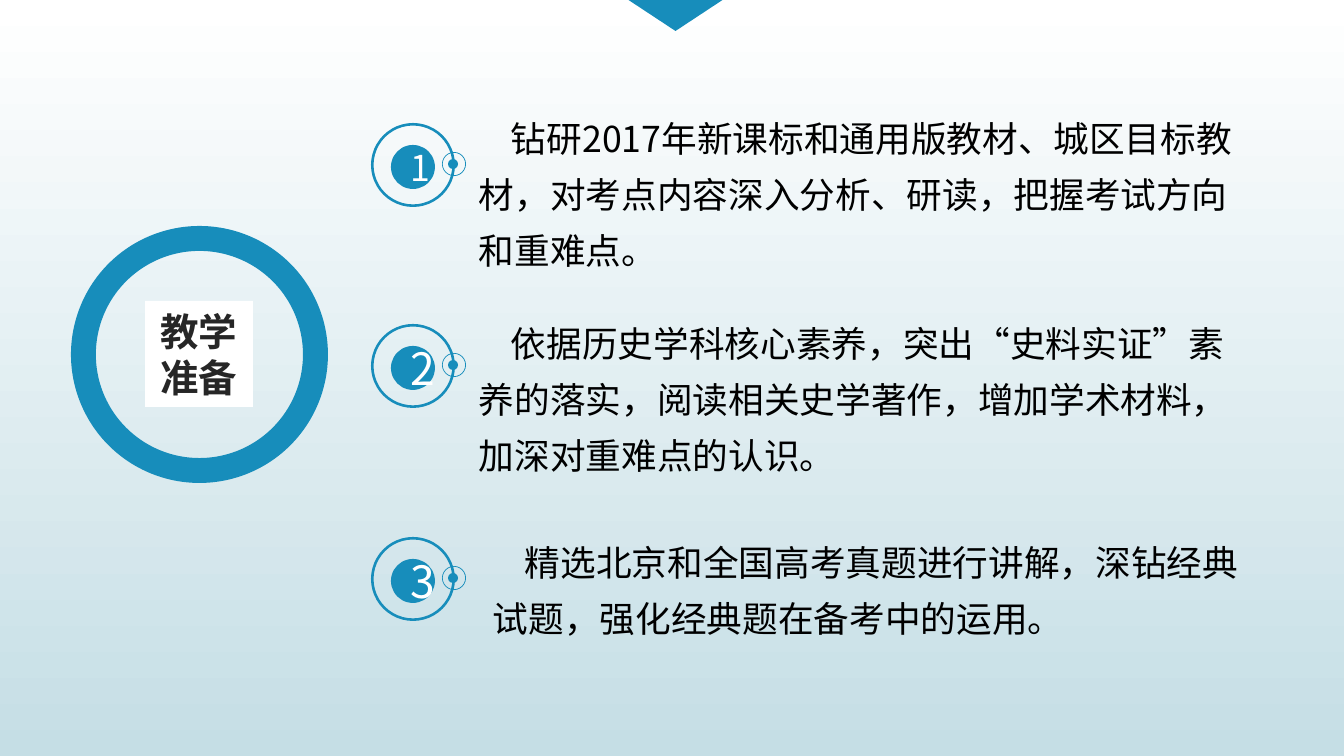
from pptx import Presentation
from pptx.dml.color import RGBColor
from pptx.enum.shapes import MSO_SHAPE
from pptx.enum.text import MSO_ANCHOR, MSO_AUTO_SIZE, PP_ALIGN
from pptx.oxml.ns import qn
from pptx.util import Pt
from lxml.etree import SubElement

PX = 914400 // 129
FACE = "Noto Sans CJK SC"
BLUE = "178DBB"
INDENT = 32

# Top of each marker, its number and size, then the passage and its box
ITEMS = [
    (123, "1", 19.9, (466, 98, 798, 181),
     "钻研2017年新课标和通用版教材、城区目标教材，对考点内容深入分析、研读，把握考试方向和重难点。"),
    (324, "2", 24.8, (466, 303, 798, 181),
     "依据历史学科核心素养，突出“史料实证”素养的落实，阅读相关史学著作，增加学术材料，加深对重难点的认识。"),
    (537, "3", 24.8, (480, 522, 784, 125),
     "精选北京和全国高考真题进行讲解，深钻经典试题，强化经典题在备考中的运用。"),
]


def color(code):
    return RGBColor.from_string(code)


def place(shape, box):
    shape.left, shape.top, shape.width, shape.height = [n * PX for n in box]


def style(para, size, code, bold=False, align=PP_ALIGN.LEFT, lines=1.0):
    font = para.font
    font.name, font.size, font.bold = FACE, Pt(size), bold
    font.color.rgb = color(code)
    para.alignment, para.line_spacing = align, lines
    para.space_before = Pt(0)
    # East Asian glyphs take their own typeface entry
    props = para._p.pPr.find(qn("a:defRPr"))
    SubElement(props, qn("a:ea")).set("typeface", FACE)


def add_solid(shapes, kind, box, adj=None):
    shape = shapes.add_shape(kind, *[n * PX for n in box])
    shape.shadow.inherit = False
    shape.fill.solid()
    shape.fill.fore_color.rgb = color(BLUE)
    shape.line.fill.background()
    if adj is not None:
        shape.adjustments[0] = adj
    return shape


def add_marker(slide, top, label, size):
    shapes = slide.shapes.add_group_shape().shapes
    add_solid(shapes, MSO_SHAPE.DONUT, (371, top, 84, 84), 0.031)
    add_solid(shapes, MSO_SHAPE.DONUT, (442, top + 29, 24, 24), 0.031)
    add_solid(shapes, MSO_SHAPE.OVAL, (448, top + 36, 10, 10))
    disc = add_solid(shapes, MSO_SHAPE.OVAL, (391, top + 22, 44, 44))
    disc.text_frame.text = label
    style(disc.text_frame.paragraphs[0], size, "FFFFFF", align=PP_ALIGN.CENTER)


def fill_passage(holder, box, text):
    place(holder, box)
    frame = holder.text_frame
    frame.text = text
    frame.auto_size = MSO_AUTO_SIZE.NONE
    frame.vertical_anchor = MSO_ANCHOR.TOP
    para = frame.paragraphs[0]
    style(para, 19.9, "000000", lines=1.3)
    # First-line indent without a bullet
    props = para._p.pPr
    props.set("marL", "0")
    props.set("indent", str(INDENT * PX))
    props.find(qn("a:defRPr")).addprevious(SubElement(props, qn("a:buNone")))


def fill_title(title):
    place(title, (145, 301, 108, 106))
    title.fill.solid()
    title.fill.fore_color.rgb = color("FFFFFF")
    frame = title.text_frame
    frame.text = "教学\n准备"
    frame.auto_size = MSO_AUTO_SIZE.NONE
    frame.vertical_anchor = MSO_ANCHOR.MIDDLE
    for para in frame.paragraphs:
        style(para, 21.5, "262626", bold=True, align=PP_ALIGN.CENTER)


def paint_back(slide):
    fill = slide.background.fill
    fill.gradient()
    fill.gradient_angle = 270
    for stop, code in zip(fill.gradient_stops, ("FFFFFF", "C5DEE5")):
        stop.color.rgb = color(code)


def main():
    deck = Presentation()
    deck.slide_width, deck.slide_height = 1344 * PX, 756 * PX
    # The comparison layout offers a title and several text bodies
    slide = deck.slides.add_slide(deck.slide_layouts[4])
    paint_back(slide)

    # Top pointer and title ring
    pointer = add_solid(slide.shapes, MSO_SHAPE.ISOSCELES_TRIANGLE, (627, -1, 97, 32))
    pointer.rotation = 180
    add_solid(slide.shapes, MSO_SHAPE.DONUT, (71, 226, 257, 257), 0.097)
    fill_title(slide.shapes.title)

    # Numbered passages
    title, *bodies, spare = slide.placeholders
    for body, (top, label, size, box, text) in zip(bodies, ITEMS):
        add_marker(slide, top, label, size)
        fill_passage(body, box, text)
    spare._element.getparent().remove(spare._element)

    deck.save("out.pptx")


if __name__ == "__main__":
    main()
